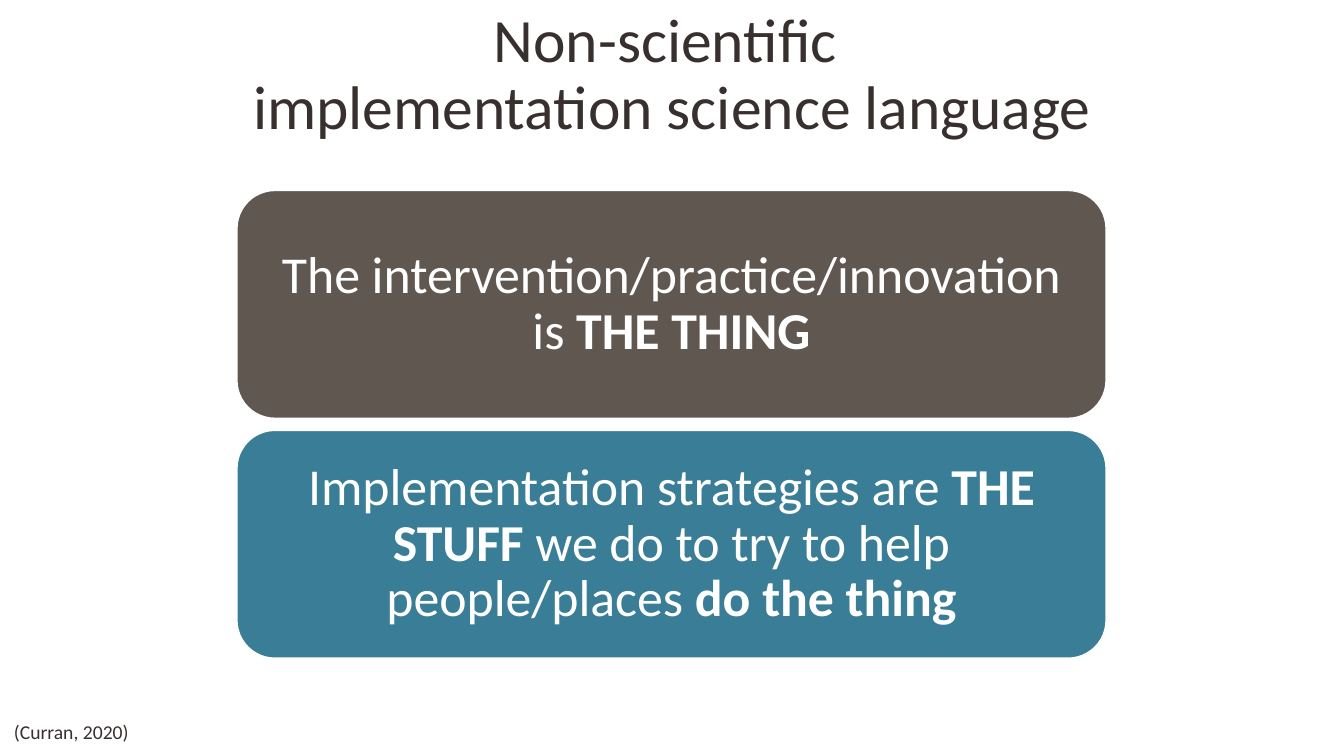
from dataclasses import dataclass

from pptx import Presentation
from pptx.dml.color import RGBColor
from pptx.enum.shapes import MSO_SHAPE
from pptx.enum.text import MSO_ANCHOR, PP_ALIGN
from pptx.util import Inches, Pt

ROUNDED = MSO_SHAPE.ROUNDED_RECTANGLE
CENTER = PP_ALIGN.CENTER
MIDDLE = MSO_ANCHOR.MIDDLE
TOP = MSO_ANCHOR.TOP

SLIDE_WIDTH, SLIDE_HEIGHT = 13.33, 7.5
PANEL_LEFT, PANEL_TOP = 2.35, 1.89
PANEL_WIDTH, PANEL_HEIGHT = 8.62, 2.26
PANEL_PITCH = 2.38
BLANK_LAYOUT = 6


@dataclass(frozen=True)
class Theme:
    font: str = "Calibri"
    ink: str = "38302E"
    white: str = "FFFFFF"
    brown: str = "615751"
    teal: str = "3A7D96"
    title_size: int = 44
    panel_size: int = 37
    citation_size: int = 14


THEME = Theme()


def color(value):
    return RGBColor.from_string(value)


def write_lines(shape, lines, size, ink, anchor=MIDDLE, spacing=0.9):
    frame = shape.text_frame
    frame.word_wrap = True
    frame.vertical_anchor = anchor
    paragraph = frame.paragraphs[0]
    paragraph.alignment = CENTER
    paragraph.line_spacing = spacing
    for index, line in enumerate(lines):
        if index:
            paragraph.add_line_break()
        for text, bold in line:
            run = paragraph.add_run()
            run.text = text
            run.font.name = THEME.font
            run.font.size = Pt(size)
            run.font.bold = bold
            run.font.color.rgb = color(ink)


def add_text(slide, box, lines, size, **layout):
    shape = slide.shapes.add_textbox(*map(Inches, box))
    write_lines(shape, lines, size, THEME.ink, **layout)


def add_panel(slide, row, fill, runs):
    box = (PANEL_LEFT, PANEL_TOP + row * PANEL_PITCH, PANEL_WIDTH, PANEL_HEIGHT)
    shape = slide.shapes.add_shape(ROUNDED, *map(Inches, box))
    shape.shadow.inherit = False
    shape.fill.solid()
    shape.fill.fore_color.rgb = color(fill)
    shape.line.color.rgb = color(THEME.white)
    shape.line.width = Pt(1)
    frame = shape.text_frame
    frame.margin_left = frame.margin_right = Inches(0.2)
    frame.margin_top = frame.margin_bottom = Inches(0.15)
    write_lines(shape, [runs], THEME.panel_size, THEME.white)


def main():
    presentation = Presentation()
    presentation.slide_width = Inches(SLIDE_WIDTH)
    presentation.slide_height = Inches(SLIDE_HEIGHT)
    slide = presentation.slides.add_slide(presentation.slide_layouts[BLANK_LAYOUT])

    title = [
        [("Non-scientific ", False)],
        [("implementation science language", False)],
    ]
    add_text(slide, (0.92, 0.03, 11.5, 1.45), title, THEME.title_size)

    panels = [
        (THEME.brown, [
            ("The intervention/practice/innovation is ", False),
            ("THE THING", True),
        ]),
        (THEME.teal, [
            ("Implementation strategies are ", False),
            ("THE STUFF ", True),
            ("we do to try to help people/places ", False),
            ("do the thing", True),
        ]),
    ]
    for row, (fill, runs) in enumerate(panels):
        add_panel(slide, row, fill, runs)

    citation = [[("(Curran, 2020) ", False)]]
    add_text(slide, (0, 7.09, 1.46, 0.34), citation, THEME.citation_size,
             anchor=TOP, spacing=1.0)

    presentation.save("out.pptx")


if __name__ == "__main__":
    main()
